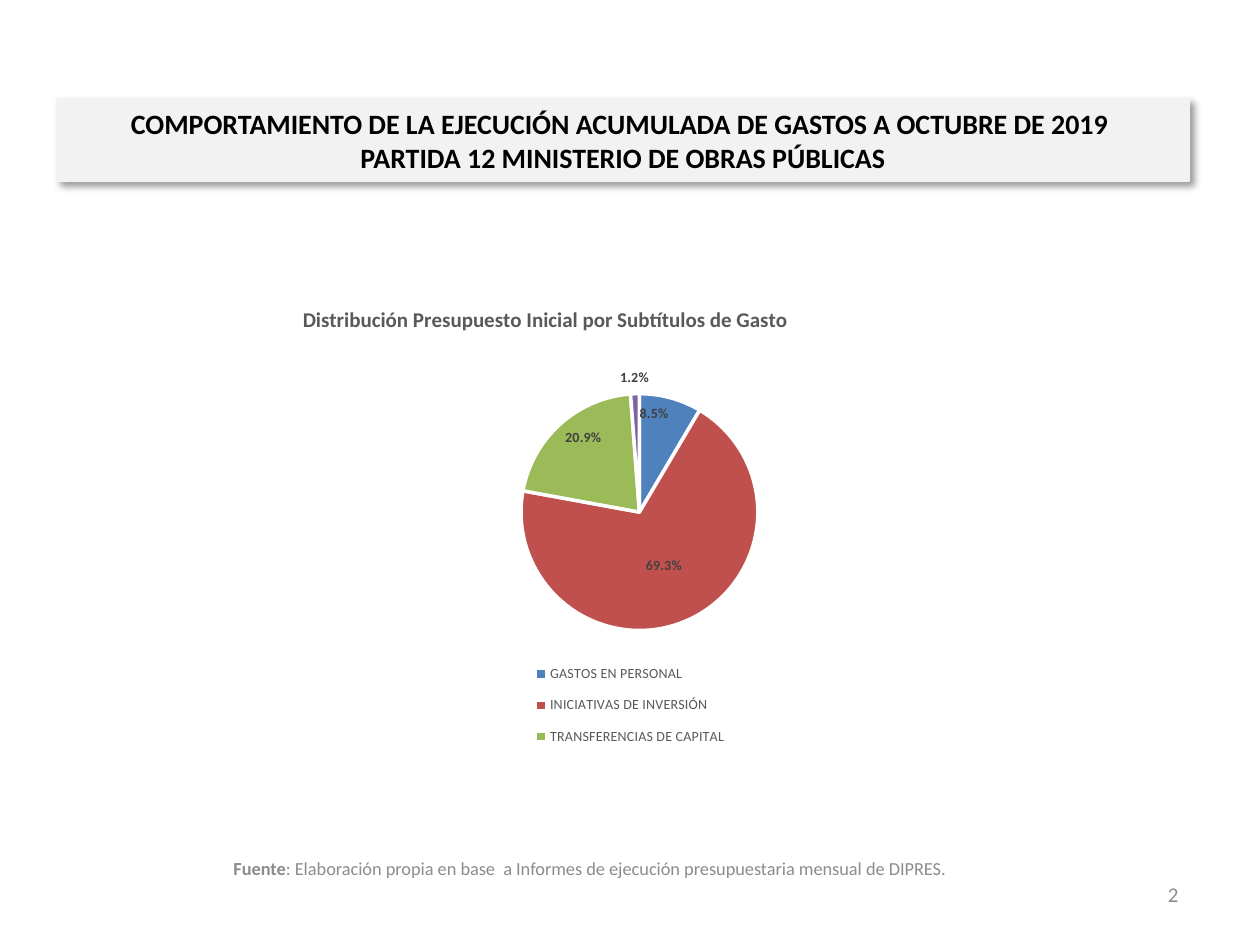
from dataclasses import dataclass

from lxml import etree
from pptx import Presentation
from pptx.chart.chart import Chart
from pptx.chart.data import CategoryChartData
from pptx.dml.color import RGBColor
from pptx.enum.chart import XL_CHART_TYPE, XL_LABEL_POSITION, XL_LEGEND_POSITION
from pptx.enum.shapes import MSO_SHAPE
from pptx.enum.text import MSO_ANCHOR, PP_ALIGN
from pptx.oxml import parse_xml
from pptx.oxml.ns import nsdecls, qn
from pptx.slide import Slide
from pptx.util import Emu, Pt

PIE = XL_CHART_TYPE.PIE
BOTTOM = XL_LEGEND_POSITION.BOTTOM
INSIDE_END = XL_LABEL_POSITION.INSIDE_END
OUTSIDE_END = XL_LABEL_POSITION.OUTSIDE_END
CENTER_LABEL = XL_LABEL_POSITION.CENTER
RECTANGLE = MSO_SHAPE.RECTANGLE
MIDDLE = MSO_ANCHOR.MIDDLE
CENTER, RIGHT = PP_ALIGN.CENTER, PP_ALIGN.RIGHT

PX_PER_INCH = 126
PERCENT_FORMAT = '0.0"%"'


@dataclass(frozen=True)
class Theme:
    font: str = "Calibri"
    black: str = "000000"
    white: str = "FFFFFF"
    banner: str = "F2F2F2"
    muted: str = "8C8C8C"
    chart_text: str = "595959"
    label: str = "404040"
    banner_size: float = 16
    source_size: float = 10.5
    number_size: float = 12
    chart_title_size: float = 12
    chart_size: float = 10
    small_size: float = 8


@dataclass(frozen=True)
class Area:
    left: int
    top: int
    width: int
    height: int

    def emu(self) -> tuple[Emu, ...]:
        return tuple(px(n) for n in (self.left, self.top, self.width, self.height))


@dataclass(frozen=True)
class Span:
    text: str
    bold: bool = False


@dataclass(frozen=True)
class Caption:
    area: Area
    spans: tuple[Span, ...]
    size: float
    align: PP_ALIGN


@dataclass(frozen=True)
class Slice:
    name: str
    percent: float
    color: str
    label_position: XL_LABEL_POSITION
    in_legend: bool = True


THEME = Theme()
BANNER = Area(57, 99, 1132, 82)
BANNER_LINES = (
    "COMPORTAMIENTO DE LA EJECUCIÓN ACUMULADA DE GASTOS A OCTUBRE DE 2019 ",
    "PARTIDA 12 MINISTERIO DE OBRAS PÚBLICAS",
)
CHART = Area(203, 265, 873, 515)
CHART_TITLE = "Distribución Presupuesto Inicial por Subtítulos de Gasto"
CAPTIONS = (
    Caption(
        Area(74, 843, 1032, 50),
        (
            Span("Fuente", bold=True),
            Span(": Elaboración propia en base  a Informes de ejecución "
                 "presupuestaria mensual de DIPRES."),
        ),
        THEME.source_size,
        CENTER,
    ),
    Caption(Area(897, 869, 294, 50), (Span("2"),), THEME.number_size, RIGHT),
)
SLICES = (
    Slice("GASTOS EN PERSONAL", 8.5, "4F81BD", INSIDE_END),
    Slice("INICIATIVAS DE INVERSIÓN", 69.3, "C0504D", CENTER_LABEL),
    Slice("TRANSFERENCIAS DE CAPITAL", 20.9, "9BBB59", INSIDE_END),
    Slice("OTROS", 1.2, "8064A2", OUTSIDE_END, in_legend=False),
)


def px(length: int) -> Emu:
    return Emu(round(length * 914400 / PX_PER_INCH))


def style_font(font, size: float, color: str, bold: bool = False) -> None:
    font.name = THEME.font
    font.size = Pt(size)
    font.bold = bold
    font.color.rgb = RGBColor.from_string(color)


def add_caption(slide: Slide, caption: Caption) -> None:
    frame = slide.shapes.add_textbox(*caption.area.emu()).text_frame
    frame.word_wrap = True
    frame.vertical_anchor = MIDDLE
    para = frame.paragraphs[0]
    para.alignment = caption.align
    style_font(para.font, caption.size, THEME.muted)
    for span in caption.spans:
        run = para.add_run()
        run.text = span.text
        run.font.bold = span.bold


def add_banner(slide: Slide) -> None:
    box = slide.shapes.add_shape(RECTANGLE, *BANNER.emu())
    box.fill.solid()
    box.fill.fore_color.rgb = RGBColor.from_string(THEME.banner)
    box.line.color.rgb = RGBColor.from_string(THEME.banner)
    box.line.width = Pt(0.75)
    box.shadow.inherit = False
    effects = box._element.spPr.find(qn("a:effectLst"))
    effects.append(parse_xml(
        f'<a:outerShdw {nsdecls("a")} blurRad="{Pt(4)}" dist="{Pt(3)}" '
        f'dir="{45 * 60000}" algn="tl" rotWithShape="0">'
        f'<a:srgbClr val="{THEME.black}"><a:alpha val="40000"/></a:srgbClr>'
        '</a:outerShdw>'
    ))
    frame = box.text_frame
    frame.word_wrap = True
    frame.vertical_anchor = MIDDLE
    frame.margin_left = frame.margin_right = px(14)
    para = frame.paragraphs[0]
    para.alignment = CENTER
    style_font(para.font, THEME.banner_size, THEME.black, bold=True)
    for index, line in enumerate(BANNER_LINES):
        if index:
            para.add_line_break()
        para.add_run().text = line


def set_layout(element, inner: bool = False, **fractions: float) -> None:
    """Place a chart part by fractions (x, y, w, h) of the chart area."""
    for old in element.findall(qn("c:layout")):
        element.remove(old)
    layout = etree.Element(qn("c:layout"))
    manual = etree.SubElement(layout, qn("c:manualLayout"))
    settings = {"layoutTarget": "inner"} if inner else {}
    settings |= {"xMode": "edge", "yMode": "edge", **fractions}
    for name, value in settings.items():
        etree.SubElement(manual, qn(f"c:{name}")).set("val", str(value))
    leading = {qn("c:tx"), qn("c:legendPos"), qn("c:legendEntry")}
    element.insert(sum(child.tag in leading for child in element), layout)


def style_legend(chart: Chart) -> None:
    chart.has_legend = True
    legend = chart.legend
    legend.position = BOTTOM
    legend.include_in_layout = False
    style_font(legend.font, THEME.small_size, THEME.chart_text)
    for index, part in enumerate(SLICES):
        if not part.in_legend:
            legend._element.insert(1, parse_xml(
                f'<c:legendEntry {nsdecls("c")}><c:idx val="{index}"/>'
                '<c:delete val="1"/></c:legendEntry>'
            ))
    set_layout(legend._element, x=0.37, y=0.75, w=0.24, h=0.21)


def add_spending_pie(slide: Slide) -> None:
    data = CategoryChartData(number_format=PERCENT_FORMAT)
    data.categories = [part.name for part in SLICES]
    data.add_series("Series 1", [part.percent for part in SLICES])
    chart = slide.shapes.add_chart(PIE, *CHART.emu(), data).chart
    style_font(chart.font, THEME.chart_size, THEME.black)

    chart.has_title = True
    title = chart.chart_title
    para = title.text_frame.paragraphs[0]
    para.text = CHART_TITLE
    style_font(para.font, THEME.chart_title_size, THEME.chart_text, bold=True)
    set_layout(title._element, x=0.11, y=0.07)
    set_layout(chart._chartSpace.chart.plotArea, inner=True, x=0, y=0.25, w=1, h=0.46)
    style_legend(chart)

    plot = chart.plots[0]
    plot.vary_by_categories = True
    series = plot.series[0]
    labels = series.data_labels
    labels.show_value = True
    labels.number_format = PERCENT_FORMAT
    labels.number_format_is_linked = False
    style_font(labels.font, THEME.small_size, THEME.label, bold=True)
    for index, part in enumerate(SLICES):
        point = series.points[index]
        point.format.fill.solid()
        point.format.fill.fore_color.rgb = RGBColor.from_string(part.color)
        point.format.line.color.rgb = RGBColor.from_string(THEME.white)
        point.format.line.width = Pt(2)
        style_font(point.data_label.font, THEME.small_size, THEME.label, bold=True)
        point.data_label.position = part.label_position


def main() -> None:
    deck = Presentation()
    deck.slide_width, deck.slide_height = px(1260), px(945)
    page = deck.slides.add_slide(deck.slide_layouts[6])
    for caption in CAPTIONS:
        add_caption(page, caption)
    add_banner(page)
    add_spending_pie(page)
    deck.save("out.pptx")


if __name__ == "__main__":
    main()
